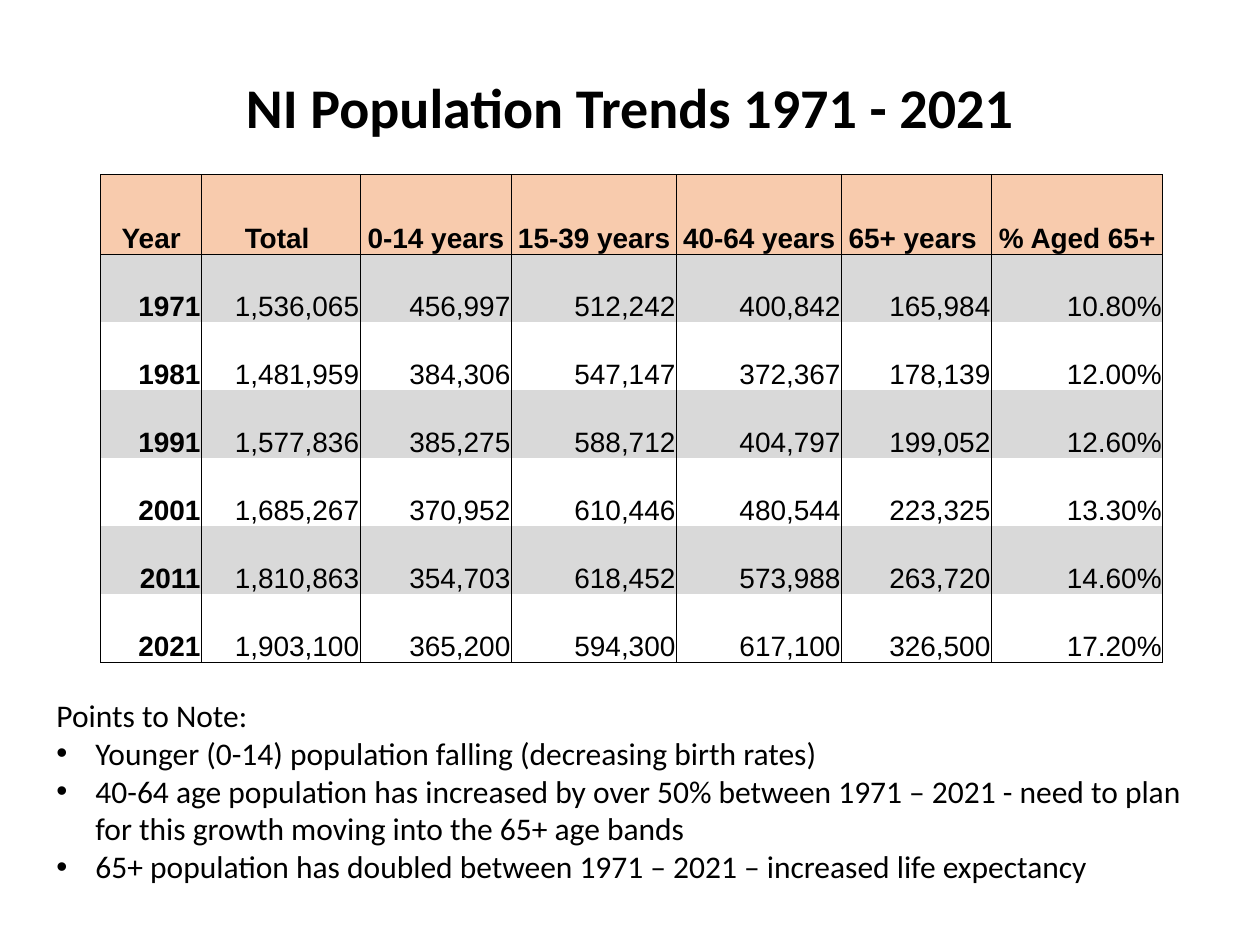
from typing import NamedTuple

from lxml.etree import SubElement
from pptx import Presentation
from pptx.dml.color import RGBColor
from pptx.enum.text import MSO_ANCHOR, MSO_AUTO_SIZE, PP_ALIGN
from pptx.oxml.ns import qn
from pptx.util import Inches, Pt

WIDE, HIGH = 10, 7.5
COLORS = {"ink": "000000", "head": "F8CBAD", "band": "D9D9D9"}
COLS = (0.8, 1.26, 1.2, 1.31, 1.31, 1.19, 1.36)
ROWS = (0.63,) + (0.54,) * 6


class Box(NamedTuple):
    left: float
    top: float
    width: float
    height: float


class Line(NamedTuple):
    year: str
    counts: tuple[str, ...]


TITLE = Box(0.185, 0.07, 0.63, 0.085)
TABLE = Box(0.08, 0.185, 0.84, 0.51)
NOTES = Box(0.035, 0.73, 0.93, 0.215)

HEAD = Line("Year", ("Total ", "0-14 years", "15-39 years", "40-64 years",
                     "65+ years ", "% Aged 65+"))
LINES = (
    Line("1971", ("1,536,065", "456,997", "512,242", "400,842", "165,984", "10.80%")),
    Line("1981", ("1,481,959", "384,306", "547,147", "372,367", "178,139", "12.00%")),
    Line("1991", ("1,577,836", "385,275", "588,712", "404,797", "199,052", "12.60%")),
    Line("2001", ("1,685,267", "370,952", "610,446", "480,544", "223,325", "13.30%")),
    Line("2011", ("1,810,863", "354,703", "618,452", "573,988", "263,720", "14.60%")),
    Line("2021", ("1,903,100", "365,200", "594,300", "617,100", "326,500", "17.20%")),
)
POINTS = (
    "Younger (0-14) population falling (decreasing birth rates)",
    "40-64 age population has increased by over 50% between 1971 – 2021 - "
    "need to plan for this growth moving into the 65+ age bands",
    "65+ population has doubled between 1971 – 2021 – increased life expectancy",
)


def place(box: Box) -> tuple:
    return (Inches(box.left * WIDE), Inches(box.top * HIGH),
            Inches(box.width * WIDE), Inches(box.height * HIGH))


def style(para, size: float, face: str, bold: bool = False) -> None:
    for run in para.runs:
        run.font.size, run.font.name, run.font.bold = Pt(size), face, bold
        run.font.color.rgb = RGBColor.from_string(COLORS["ink"])


def edge(cell, sides: str) -> None:
    props = cell._tc.get_or_add_tcPr()
    for side in "LRTB":
        line = SubElement(props, qn(f"a:ln{side}"), w=str(Pt(0.5)))
        if side in sides:
            fill = SubElement(line, qn("a:solidFill"))
            SubElement(fill, qn("a:srgbClr"), val=COLORS["ink"])
        else:
            SubElement(line, qn("a:noFill"))


def paint(cell, color: str) -> None:
    if color:
        cell.fill.solid()
        cell.fill.fore_color.rgb = RGBColor.from_string(COLORS[color])
    else:
        cell.fill.background()


def write(cell, text: str, row: int, col: int) -> None:
    cell.margin_left = cell.margin_right = cell.margin_top = Inches(0.01)
    cell.margin_bottom = 0
    cell.vertical_anchor = MSO_ANCHOR.BOTTOM
    para = cell.text_frame.paragraphs[0]
    para.text = text
    para.alignment = PP_ALIGN.RIGHT if row else PP_ALIGN.CENTER
    style(para, 16, "Arial", row == 0 or col == 0)
    top = "T" if row < 2 else ""
    base = "B" if row in (0, len(LINES)) else ""
    edge(cell, "LR" + top + base)
    paint(cell, "head" if row == 0 else "band" if row % 2 else "")


def tabulate(slide) -> None:
    table = slide.shapes.add_table(len(ROWS), len(COLS), *place(TABLE)).table
    table.first_row = table.horz_banding = False
    for col, width in zip(table.columns, COLS):
        col.width = Inches(width)
    for row, height in zip(table.rows, ROWS):
        row.height = Inches(height)
    for row, line in enumerate((HEAD, *LINES)):
        for col, text in enumerate((line.year, *line.counts)):
            write(table.cell(row, col), text, row, col)


def bullet(para) -> None:
    props = para._p.get_or_add_pPr()
    props.set("marL", str(Inches(0.31)))
    props.set("indent", str(-Inches(0.31)))
    SubElement(props, qn("a:buFont"), typeface="Arial")
    SubElement(props, qn("a:buChar"), char="•")


def head(slide) -> None:
    title = slide.shapes.title
    title.left, title.top, title.width, title.height = place(TITLE)
    frame = title.text_frame
    frame.text = "NI Population Trends 1971 - 2021"
    frame.word_wrap = False
    frame.auto_size = MSO_AUTO_SIZE.SHAPE_TO_FIT_TEXT
    frame.vertical_anchor = MSO_ANCHOR.TOP
    style(frame.paragraphs[0], 32, "Calibri", True)


def note(slide) -> None:
    frame = slide.shapes.add_textbox(*place(NOTES)).text_frame
    frame.word_wrap = True
    frame.auto_size = MSO_AUTO_SIZE.SHAPE_TO_FIT_TEXT
    frame.text = "Points to Note:"
    for point in POINTS:
        para = frame.add_paragraph()
        para.text = point
        bullet(para)
    for para in frame.paragraphs:
        style(para, 18, "Calibri")


def main() -> None:
    deck = Presentation()
    deck.slide_width, deck.slide_height = Inches(WIDE), Inches(HIGH)
    slide = deck.slides.add_slide(deck.slide_layouts.get_by_name("Title Only"))
    head(slide)
    tabulate(slide)
    note(slide)
    deck.save("out.pptx")


if __name__ == "__main__":
    main()
